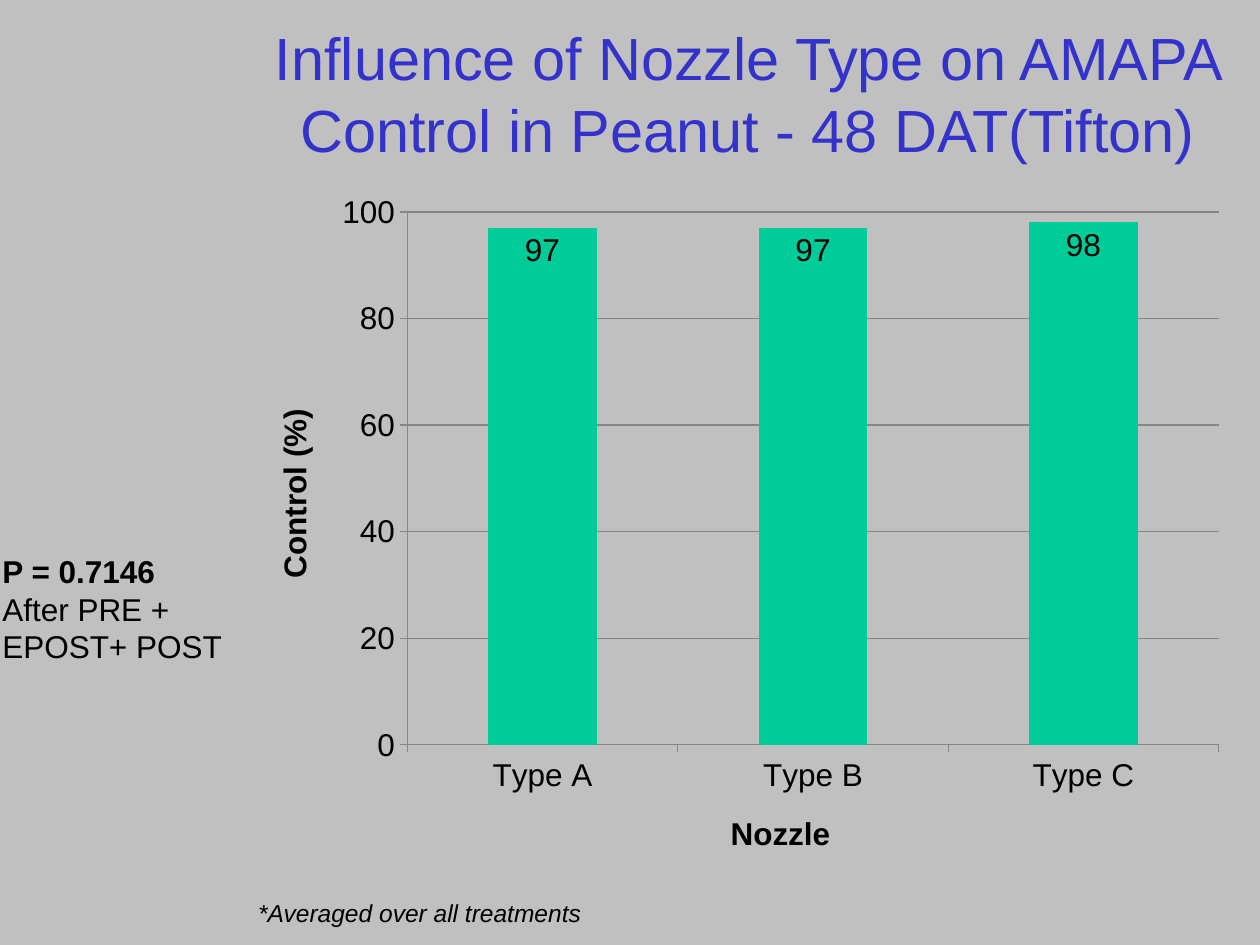
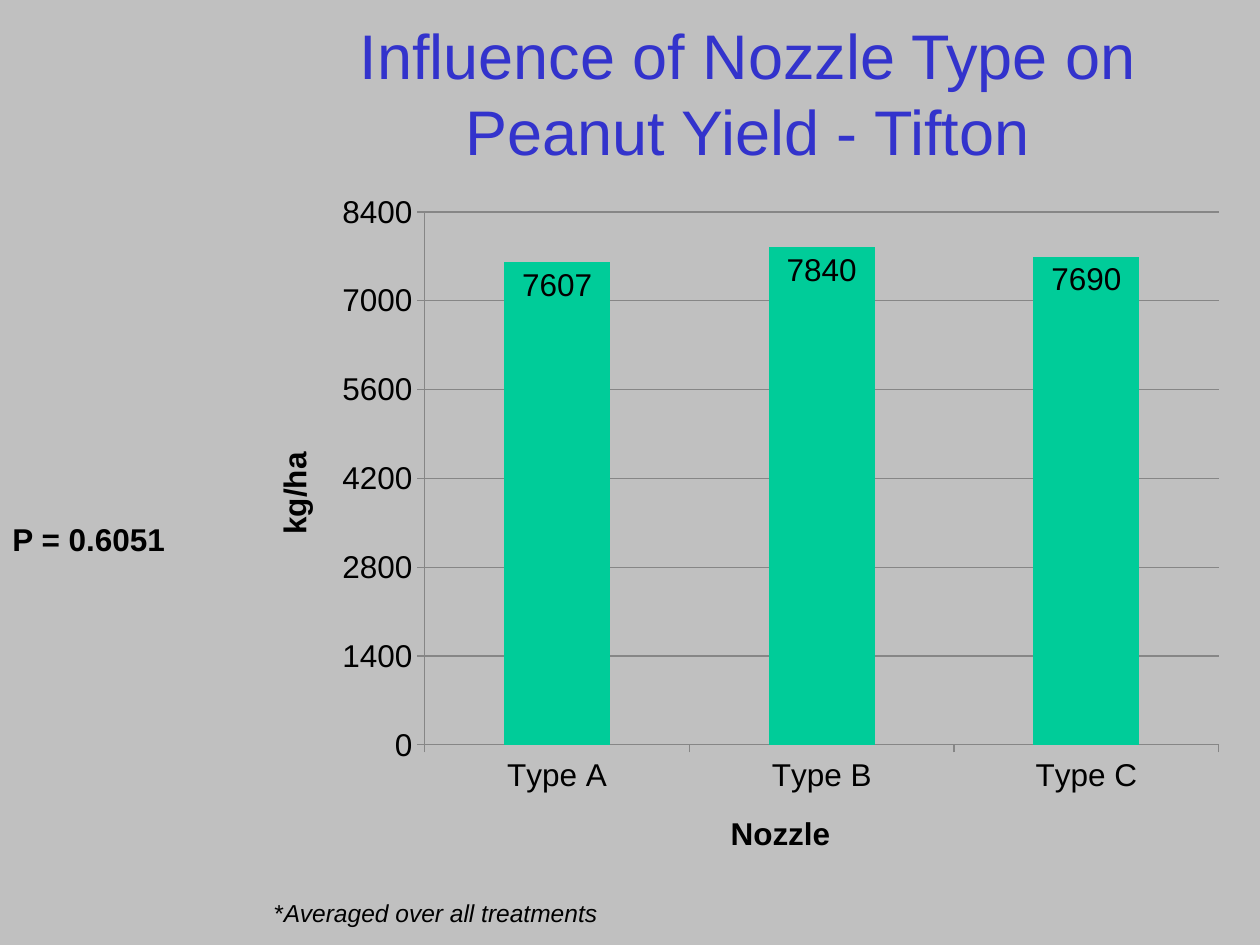
from pptx import Presentation
from pptx import util as u
from pptx.chart import data
from pptx.dml.color import RGBColor
from pptx.enum import chart as charts, text

BACKGROUND = RGBColor(0xC0, 0xC0, 0xC0)
TITLE_BLUE = RGBColor(0x33, 0x33, 0xCC)
BAR_GREEN = RGBColor(0x00, 0xCC, 0x99)
GRID_GRAY = RGBColor(0x86, 0x86, 0x86)
BLACK = RGBColor(0, 0, 0)
FONT = "Arial"
BODY_SIZE, NOTE_SIZE = 18, 14
COLUMNS, ROWS = 100, 75  # grid cells of 0.1 inch
CONTENT_LEFT = 19.5
NOZZLES = ["Type A", "Type B", "Type C"]


def set_font(font, size, color=BLACK, bold=False, italic=False):
    font.name = FONT
    font.size = u.Pt(size)
    font.color.rgb = color
    font.bold = bold
    font.italic = italic


class Deck:
    """Holds the shared style and the current slide."""

    def __init__(self):
        self.presentation = Presentation()
        self.presentation.slide_width = u.Inches(10)
        self.presentation.slide_height = u.Inches(7.5)
        fill = self.presentation.slide_master.background.fill
        fill.solid()
        fill.fore_color.rgb = BACKGROUND
        self.slide = None

    def area(self, column, row, columns, rows):
        cell_width = self.presentation.slide_width / COLUMNS
        cell_height = self.presentation.slide_height / ROWS
        return (round(column * cell_width), round(row * cell_height),
                round(columns * cell_width), round(rows * cell_height))

    def add_slide(self, title, size):
        layout = self.presentation.slide_layouts.get_by_name("Title Only")
        self.slide = self.presentation.slides.add_slide(layout)
        shape = self.slide.shapes.title
        shape.left, shape.top, shape.width, shape.height = self.area(
            CONTENT_LEFT, 1.1, 79.7, 12.5)
        frame = shape.text_frame
        frame.text = title
        frame.word_wrap = True
        frame.auto_size = text.MSO_AUTO_SIZE.NONE
        frame.vertical_anchor = text.MSO_ANCHOR.MIDDLE
        paragraph = frame.paragraphs[0]
        paragraph.alignment = text.PP_ALIGN.CENTER
        set_font(paragraph.font, size, TITLE_BLUE)

    def add_text(self, place, size, paragraphs):
        """Each paragraph is a list of (words, font style) runs."""
        frame = self.slide.shapes.add_textbox(*self.area(*place)).text_frame
        frame.word_wrap = True
        for index, runs in enumerate(paragraphs):
            paragraph = frame.add_paragraph() if index else frame.paragraphs[0]
            for words, style in runs:
                run = paragraph.add_run()
                run.text = words
                set_font(run.font, size, **style)

    def add_axis(self, axis, title):
        axis.axis_title.text_frame.text = title
        set_font(axis.axis_title.text_frame.paragraphs[0].font, BODY_SIZE, bold=True)
        set_font(axis.tick_labels.font, BODY_SIZE)
        axis.major_tick_mark = charts.XL_TICK_MARK.OUTSIDE
        axis.format.line.color.rgb = GRID_GRAY

    def add_column_chart(self, values, unit, maximum, step):
        chart_data = data.CategoryChartData()
        chart_data.categories = NOZZLES
        chart_data.add_series("Series 1", values)
        chart = self.slide.shapes.add_chart(
            charts.XL_CHART_TYPE.COLUMN_CLUSTERED,
            *self.area(CONTENT_LEFT, 14.3, 78.8, 55.7), chart_data).chart
        chart.has_legend = False
        chart.has_title = False
        set_font(chart.font, BODY_SIZE)

        # Axes
        self.add_axis(chart.category_axis, "Nozzle")
        value_axis = chart.value_axis
        self.add_axis(value_axis, unit)
        value_axis.minimum_scale = 0
        value_axis.maximum_scale = maximum
        value_axis.major_unit = step
        value_axis.major_gridlines.format.line.color.rgb = GRID_GRAY

        # Columns and their labels
        plot = chart.plots[0]
        plot.gap_width = 150
        plot.vary_by_categories = False
        fill = plot.series[0].format.fill
        fill.solid()
        fill.fore_color.rgb = BAR_GREEN
        plot.has_data_labels = True
        labels = plot.data_labels
        labels.show_value = True
        labels.position = charts.XL_LABEL_POSITION.INSIDE_END
        set_font(labels.font, BODY_SIZE)


def main():
    deck = Deck()
    bold, italic = {"bold": True}, {"italic": True}

    # Weed control
    deck.add_slide("Influence of Nozzle Type on AMAPA Control in Peanut - 48 DAT(Tifton)", 34)
    deck.add_column_chart([97, 97, 98], "Control (%)", 100, 20)
    deck.add_text((-0.8, 43.3, 25.8, 10.1), BODY_SIZE,
                  [[("P = 0.7146", bold)], [("After PRE + EPOST+ POST", {})]])
    deck.add_text((CONTENT_LEFT, 70.8, 40.5, 3.4), NOTE_SIZE,
                  [[("*Averaged over all treatments", italic)]])

    # Peanut yield
    deck.add_slide("Influence of Nozzle Type on Peanut Yield - Tifton", 36)
    deck.add_column_chart([7607, 7840, 7690], "kg/ha", 8400, 1400)
    deck.add_text((0, 40.8, 16.7, 4), BODY_SIZE, [[("P = 0.6051", bold)]])
    deck.add_text((20.8, 70.8, 40, 3.4), NOTE_SIZE,
                  [[("*", {}), ("Averaged over all treatments", italic)]])

    deck.presentation.save("out.pptx")


if __name__ == "__main__":
    main()
